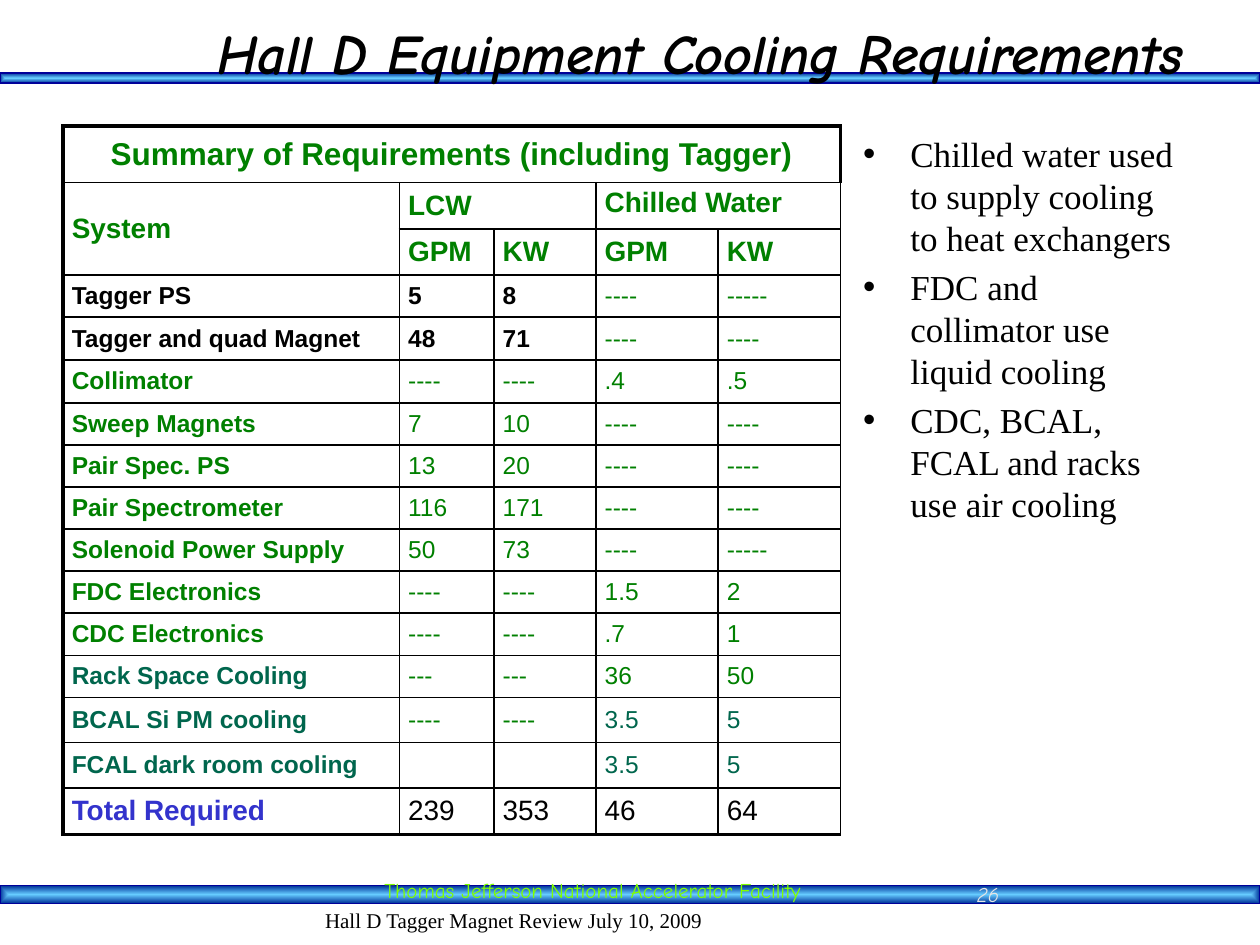
from pptx import Presentation
from pptx.dml.color import RGBColor
from pptx.enum.shapes import MSO_SHAPE
from pptx.enum.text import MSO_ANCHOR, MSO_AUTO_SIZE, PP_ALIGN
from pptx.oxml import parse_xml
from pptx.oxml.ns import nsdecls
from pptx.util import Inches, Pt

HUES = {
    "black": "000000", "white": "FFFFFF", "green": "008000", "teal": "00664D",
    "blue": "3333CC", "lime": "80FF00", "gray": "E6E6E6",
    "sky": "66CCFF", "navy": "003399", "edge": "000099",
}
HEAD = [
    ["Summary of Requirements (including Tagger)", "", "", "", ""],
    ["System", "LCW", "", "Chilled Water", ""],
    ["", "GPM", "KW", "GPM", "KW"],
]
# Each row: label, LCW and chilled water colours, then the five texts
ROWS = [
    ("black", "black", "green", ["Tagger PS", "5", "8", "----", "-----"]),
    ("black", "black", "green", ["Tagger and quad Magnet", "48", "71", "----", "----"]),
    ("green", "green", "green", ["Collimator", "----", "----", ".4", ".5"]),
    ("green", "green", "green", ["Sweep Magnets", "7", "10", "----", "----"]),
    ("green", "green", "green", ["Pair Spec. PS", "13", "20", "----", "----"]),
    ("green", "green", "green", ["Pair Spectrometer", "116", "171", "----", "----"]),
    ("green", "green", "green", ["Solenoid Power Supply", "50", "73", "----", "-----"]),
    ("green", "green", "green", ["FDC Electronics", "----", "----", "1.5", "2"]),
    ("green", "green", "green", ["CDC Electronics", "----", "----", ".7", "1"]),
    ("teal", "green", "green", ["Rack Space Cooling", "---", "---", "36", "50"]),
    ("teal", "green", "teal", ["BCAL Si PM cooling", "----", "----", "3.5", "5"]),
    ("teal", "green", "teal", ["FCAL dark room cooling", "", "", "3.5", "5"]),
    ("blue", "black", "black", ["Total Required", "239", "353", "46", "64"]),
]
WIDTHS = [2.67, 0.75, 0.81, 0.97, 0.97]
HEIGHTS = [0.45] + [0.3] * 3 + [0.34] * 2 + [0.33] * 7 + [0.36] * 3
SPANS = [(0, 0, 0, 4), (1, 0, 2, 0), (1, 1, 1, 2), (1, 3, 1, 4)]
POINTS = [
    "Chilled water used to supply cooling to heat exchangers",
    "FDC and collimator use liquid cooling",
    "CDC, BCAL, FCAL and racks use air cooling",
]


def rgb(hue):
    return RGBColor.from_string(HUES[hue])


class Deck:
    comic, serif, sans = "Comic Neue", "Times New Roman", "Arial"

    def __init__(self):
        self.file = Presentation()
        self.file.slide_width, self.file.slide_height = Inches(10), Inches(7.5)
        self.slide = self.file.slides.add_slide(self.file.slide_layouts[1])
        self.shapes = self.slide.shapes

    def place(self, shape, box):
        shape.left, shape.top, shape.width, shape.height = map(Inches, box)

    def style(self, para, face, size, hue, bold=False, italic=False):
        font = para.font
        font.name, font.size = face, Pt(size)
        font.bold, font.italic = bold, italic
        font.color.rgb = rgb(hue)

    def bar(self, top, height):
        bar = self.shapes.add_shape(
            MSO_SHAPE.RECTANGLE, 0, Inches(top), Inches(10), Inches(height))
        bar.shadow.inherit = False
        bar.line.color.rgb, bar.line.width = rgb("edge"), Pt(0.75)
        bar.fill.gradient()
        for stop, spot, hue in zip(bar.fill.gradient_stops, (0, 1), ("sky", "navy")):
            stop.position, stop.color.rgb = spot, rgb(hue)
        # Shade from the centre out
        line = bar.element.xpath(".//a:gradFill/a:lin")[0]
        line.getparent().replace(line, parse_xml(
            f'<a:path {nsdecls("a")} path="shape"><a:fillToRect l="50000" '
            't="50000" r="50000" b="50000"/></a:path>'))
        # Bars lie behind the title
        bar.element.getparent().insert(2, bar.element)

    def title(self, text, box):
        title = self.shapes.title
        self.place(title, box)
        title.text = text
        title.text_frame.auto_size = MSO_AUTO_SIZE.NONE
        title.text_frame.vertical_anchor = MSO_ANCHOR.MIDDLE
        para = title.text_frame.paragraphs[0]
        para.alignment = PP_ALIGN.RIGHT
        self.style(para, self.comic, 32, "black", True, True)

    def bullets(self, items, box):
        body = self.slide.placeholders[1]
        self.place(body, box)
        frame = body.text_frame
        frame.text = "\n".join(items)
        frame.auto_size = MSO_AUTO_SIZE.NONE
        for i, para in enumerate(frame.paragraphs):
            para.space_before = Pt(4 if i else 0)
            self.style(para, self.serif, 20, "black")

    def label(self, text, box, face, hue, fill=None):
        label = self.shapes.add_textbox(*map(Inches, box))
        if fill:
            label.fill.solid()
            label.fill.fore_color.rgb = rgb(fill)
        frame = label.text_frame
        frame.word_wrap = True
        frame.margin_left = frame.margin_right = 0
        frame.margin_top = frame.margin_bottom = 0
        para = frame.paragraphs[0]
        para.text, para.line_spacing = text, 0.8
        self.style(para, face, 12, hue)

    def number(self, text, box):
        frame = self.shapes.add_textbox(*map(Inches, box)).text_frame
        frame.word_wrap = True
        frame.vertical_anchor = MSO_ANCHOR.MIDDLE
        para = frame.paragraphs[0]
        para.text, para.alignment = text, PP_ALIGN.RIGHT
        self.style(para, self.comic, 12, "gray", italic=True)

    def cell(self, cell, text, size, hue, bold, thick):
        props = cell._tc.get_or_add_tcPr()
        for side in "LRTB":
            width = Pt(2.25 if side in thick else 1)
            props.append(parse_xml(
                f'<a:ln{side} {nsdecls("a")} w="{width}"><a:solidFill>'
                f'<a:srgbClr val="{HUES["black"]}"/></a:solidFill></a:ln{side}>'))
        cell.fill.background()
        cell.vertical_anchor = MSO_ANCHOR.MIDDLE
        cell.margin_left = cell.margin_right = Inches(0.07)
        cell.margin_top = cell.margin_bottom = Inches(0.05)
        para = cell.text_frame.paragraphs[0]
        para.text = text
        self.style(para, self.sans, size, hue, bold)
        return para

    def table(self, left, top):
        rows = [("green", "green", "green", texts) for texts in HEAD] + ROWS
        last = len(rows) - 1
        table = self.shapes.add_table(
            len(rows), len(WIDTHS), Inches(left), Inches(top),
            Inches(sum(WIDTHS)), Inches(sum(HEIGHTS))).table
        table.first_row = table.horz_banding = False
        for col, width in zip(table.columns, WIDTHS):
            col.width = Inches(width)
        for row, height in zip(table.rows, HEIGHTS):
            row.height = Inches(height)
        for r, (name, lcw, chill, texts) in enumerate(rows):
            size = 18 if r == 0 else 16 if r in (1, 2, last) else 14
            for c, text in enumerate(texts):
                hue = (name, lcw, lcw, chill, chill)[c]
                bold = r < 3 or c == 0 or (hue == "black" and r < last)
                thick = "TR" if r == 0 else "B" if r == last else ""
                thick += "L" if c == 0 else ""
                para = self.cell(table.cell(r, c), text, size, hue, bold, thick)
                if r == 0:
                    para.alignment = PP_ALIGN.CENTER
                if text == "Chilled Water":
                    para.line_spacing = 0.7
        for r, c, down, over in SPANS:
            table.cell(r, c).merge(table.cell(down, over))


def main():
    deck = Deck()
    # Bars and footer
    deck.bar(0.58, 0.08)
    deck.bar(7.03, 0.14)
    deck.label("Thomas Jefferson National Accelerator Facility",
               (3.05, 7, 4.29, 0.2), deck.comic, "lime")
    deck.label("Hall D Tagger Magnet Review July 10, 2009",
               (2.58, 7.24, 5.42, 0.16), deck.serif, "black", "white")
    # Title, table and list
    deck.title("Hall D Equipment Cooling Requirements", (0.5, 0, 9, 0.83))
    deck.table(0.5, 1)
    deck.bullets(POINTS, (6.75, 1, 2.75, 5.7))
    # Page number
    deck.number("26", (6.83, 6.92, 1.2, 0.36))
    deck.file.save("out.pptx")


if __name__ == "__main__":
    main()
